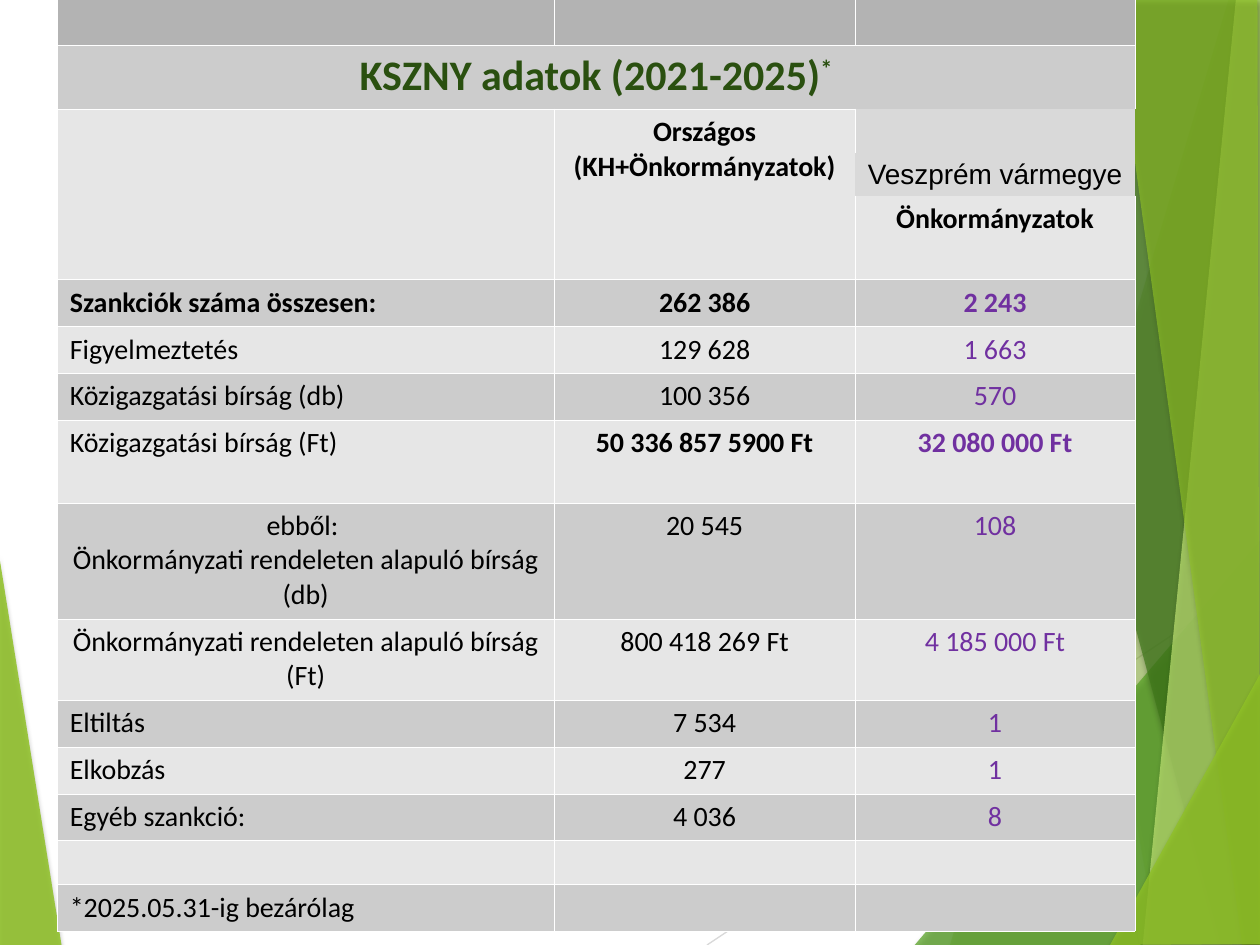
from typing import NamedTuple

from lxml.etree import SubElement
from pptx import Presentation
from pptx.dml.color import RGBColor
from pptx.enum.shapes import MSO_CONNECTOR as CONN
from pptx.enum.text import PP_ALIGN as AL
from pptx.oxml import parse_xml
from pptx.oxml.ns import nsdecls, qn
from pptx.util import Pt

BLACK, PURPLE, TITLE = "000000", "7030A0", "2A5010"
DARK, LIGHT, HEADER, MID = "CCCCCC", "E6E6E6", "B3B3B3", "D9D9D9"


class Facet(NamedTuple):
    color: str
    alpha: int
    points: list[tuple[float, float]]


class Ray(NamedTuple):
    color: str
    start: tuple[float, float]
    end: tuple[float, float]


class Row(NamedTuple):
    height: float
    label: str = ""
    national: str = ""
    county: str = ""
    bold: tuple[bool, bool, bool] = (False, False, False)
    label_align: AL = AL.LEFT


DECOR = [
    Facet("90C226", 85, [(-0.7, 316), (35.3, 540.7), (-0.7, 540)]),
    Ray("D9D9D9", (404, 540), (720.7, 329)),
    Ray("BFBFBF", (554.4, 0), (650.9, 540)),
    Facet("90C226", 30, [(702, 0), (542.9, 540), (720.7, 540.7), (720.7, 0.7)]),
    Facet("90C226", 20, [(567.4, -0.7), (661.7, 540), (720.7, 540), (720.7, -0.7)]),
    Facet("54A021", 72, [(522.7, 540), (720, 308.9), (720, 540)]),
    Facet("3F7819", 70, [(552.2, -0.7), (697.7, 540), (720.7, 539.3), (720.7, -0.7)]),
    Facet("C0E474", 70, [(706.3, -0.7), (653, 540), (720.7, 540), (720, -0.7)]),
    Facet("90C226", 65, [(635.8, -0.7), (709.9, 540), (720, 540), (718.6, -0.7)]),
    Facet("90C226", 80, [(634.3, 540), (720, 385.2), (720.7, 539.3)]),
]

COLUMNS = [283.9, 172.1, 159.8]
ROWS = [
    Row(32),
    Row(36.6),
    Row(25.2),
    Row(24.4),
    Row(47.8),
    Row(26.8, "Szankciók száma összesen:", "262 386", "2 243", (True, True, True)),
    Row(26.8, "Figyelmeztetés", "129 628", "1 663"),
    Row(26.8, "Közigazgatási bírság (db)", "100 356", "570"),
    Row(47.4, "Közigazgatási bírság (Ft)", "50 336 857 5900 Ft", "32 080 000 Ft",
        (False, True, True)),
    Row(66.3, "ebből: \vÖnkormányzati rendeleten alapuló bírság (db)", "20 545", "108",
        label_align=AL.CENTER),
    Row(46.3, "Önkormányzati rendeleten alapuló bírság (Ft)", "800 418 269 Ft",
        "4 185 000 Ft", label_align=AL.CENTER),
    Row(26.8, "Eltiltás", "7 534", "1"),
    Row(26.8, "Elkobzás", "277", "1"),
    Row(26.8, "Egyéb szankció:", "4 036", "8"),
    Row(25),
    Row(26.8, "*2025.05.31-ig bezárólag"),
]
# Sides that carry a border, where a cell does not have all four
PARTIAL_BORDERS = {(2, 2): "L", (3, 2): "", (4, 2): "LRB"}


def rgb(color: str) -> RGBColor:
    return RGBColor.from_string(color)


def add_facet(s, facet: Facet) -> None:
    first, *rest = [(Pt(x), Pt(y)) for x, y in facet.points]
    builder = s.shapes.build_freeform(*first)
    builder.add_line_segments(rest, close=True)
    sp = builder.convert_to_shape()
    sp.fill.solid()
    sp.fill.fore_color.rgb = rgb(facet.color)
    sp.line.fill.background()
    clr = sp._element.spPr.find(qn("a:solidFill"))[0]
    SubElement(clr, qn("a:alpha"), val=str(facet.alpha * 1000))
    sp._element.spPr.append(parse_xml(
        f'<a:effectLst {nsdecls("a")}><a:outerShdw blurRad="{Pt(3)}" dist="{Pt(2)}" '
        'dir="5400000" rotWithShape="0"><a:srgbClr val="000000"><a:alpha val="35000"/>'
        '</a:srgbClr></a:outerShdw></a:effectLst>'))


def add_ray(s, ray: Ray) -> None:
    line = s.shapes.add_connector(CONN.STRAIGHT, *map(Pt, ray.start + ray.end))
    line.line.color.rgb = rgb(ray.color)
    line.line.width = Pt(0.75)
    SubElement(line._element.spPr, qn("a:effectLst"))


def style_cell(cell, fill: str, sides: str) -> None:
    """Fill and border a cell; empty cells get no vertical margin."""
    cell.fill.solid()
    cell.fill.fore_color.rgb = rgb(fill)
    cell.margin_top = cell.margin_bottom = 0
    tcPr = cell._tc.get_or_add_tcPr()
    for i, side in enumerate("LRTB"):
        paint = ('<a:solidFill><a:srgbClr val="FFFFFF"/></a:solidFill>'
                 if side in sides else "<a:noFill/>")
        tcPr.insert(i, parse_xml(
            f'<a:ln{side} {nsdecls("a")} w="{Pt(0.06)}">{paint}</a:ln{side}>'))


def write(cell, text: str, align: AL = AL.CENTER, color: str = BLACK, bold: bool = True,
          size: float = 16, font: str = "Calibri") -> None:
    cell.margin_top = cell.margin_bottom = Pt(3.6)
    p = cell.text_frame.paragraphs[0]
    p.text = text
    p.alignment = align
    for r in p.runs:
        format_run(r, color, bold, size, font)


def format_run(r, color: str, bold: bool, size: float, font: str) -> None:
    r.font.name = font
    r.font.size = Pt(size)
    r.font.bold = bold
    r.font.color.rgb = rgb(color)


def add_data_table(s) -> None:
    frame = s.shapes.add_table(len(ROWS), len(COLUMNS), Pt(32.7), Pt(-6.4),
                               Pt(sum(COLUMNS)), Pt(sum(row.height for row in ROWS)))
    table = frame.table
    table.first_row = table.horz_banding = False
    for column, width in zip(table.columns, COLUMNS):
        column.width = Pt(width)

    # Banded fills, borders and the data rows
    for i, row in enumerate(ROWS):
        table.rows[i].height = Pt(row.height)
        fill = HEADER if i == 0 else LIGHT if 2 <= i <= 4 or i % 2 == 0 else DARK
        texts = (row.label, row.national, row.county)
        aligns = (row.label_align, AL.CENTER, AL.CENTER)
        for j, text in enumerate(texts):
            cell = table.cell(i, j)
            cell_fill = MID if j == 2 and i in (2, 3) else fill
            style_cell(cell, cell_fill, PARTIAL_BORDERS.get((i, j), "LRTB"))
            if text:
                write(cell, text, aligns[j], PURPLE if j == 2 else BLACK, row.bold[j])

    # Title row with its raised footnote mark
    table.cell(1, 0).merge(table.cell(1, 2))
    write(table.cell(1, 0), "KSZNY adatok (2021-2025)", color=TITLE, size=24)
    r = table.cell(1, 0).text_frame.paragraphs[0].add_run()
    r.text = "*"
    format_run(r, TITLE, True, 24, "Calibri")
    r.font._element.set("baseline", "33000")

    # Column headings; the county name needs narrow margins to stay on one line
    for j in (0, 1):
        table.cell(2, j).merge(table.cell(4, j))
    write(table.cell(2, 1), "Országos (KH+Önkormányzatok)")
    county = table.cell(3, 2)
    write(county, "Veszprém vármegye", AL.LEFT, bold=False, font="Arial")
    county.margin_right = county.margin_bottom = Pt(2)
    write(table.cell(4, 2), "Önkormányzatok")


def main() -> None:
    prs = Presentation()
    prs.slide_width, prs.slide_height = Pt(720), Pt(540)
    s = prs.slides.add_slide(prs.slide_layouts[6])
    for item in DECOR:
        if isinstance(item, Facet):
            add_facet(s, item)
        else:
            add_ray(s, item)
    add_data_table(s)
    prs.save("out.pptx")


if __name__ == "__main__":
    main()
